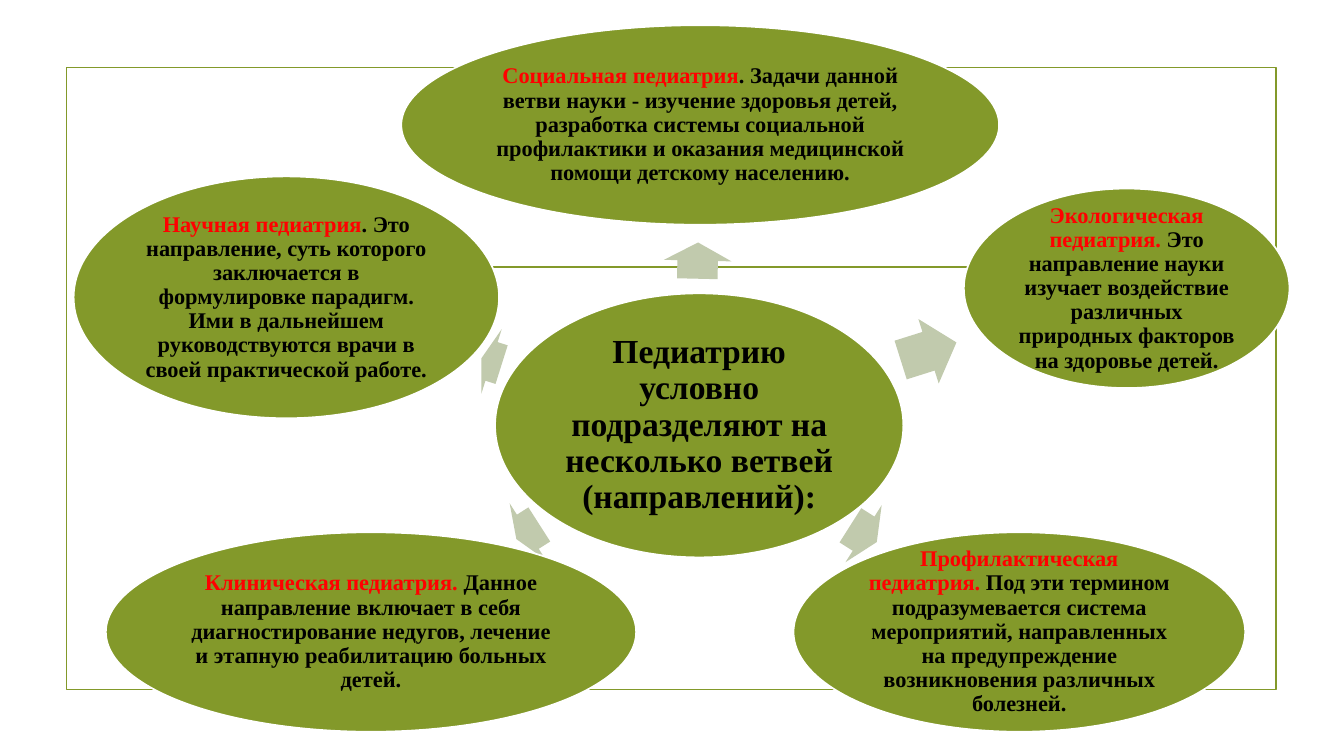
from pptx import Presentation
from pptx.dml.color import RGBColor
from pptx.enum.shapes import MSO_CONNECTOR, MSO_SHAPE
from pptx.enum.text import MSO_ANCHOR, PP_ALIGN
from pptx.oxml import parse_xml
from pptx.oxml.ns import nsdecls
from pptx.util import Pt

PX = 9144  # 100 px to the inch
OLIVE = RGBColor(0x83, 0x99, 0x2A)
SAGE = RGBColor(0xC1, 0xCA, 0xAD)
WHITE = RGBColor(0xFF, 0xFF, 0xFF)
BLACK = RGBColor(0, 0, 0)
RED = RGBColor(0xFF, 0, 0)

# Arrow box, arrow rotation, ellipse box, heading, description
BRANCHES = [
    ((674, 225, 36, 67), 271.3, (398, 25, 593, 198),
     "Социальная педиатрия",
     ". Задачи данной ветви науки - изучение здоровья детей, разработка системы "
     "социальной профилактики и оказания медицинской помощи детскому населению."),
    ((892, 315, 58, 67), 342.5, (956, 187, 323, 198),
     "Экологическая педиатрия. ",
     "Это направление науки изучает воздействие различных природных факторов "
     "на здоровье детей."),
    ((841, 496, 31, 67), 32.4, (787, 528, 448, 198),
     "Профилактическая педиатрия. ",
     "Под эти термином подразумевается система мероприятий, направленных "
     "на предупреждение возникновения различных болезней."),
    ((510, 494, 27, 67), 147.4, (105, 528, 526, 198),
     "Клиническая педиатрия. ",
     "Данное направление включает в себя диагностирование недугов, лечение "
     "и этапную реабилитацию больных детей."),
    ((477, 325, 21, 67), 197.5, (73, 175, 422, 240),
     "Научная педиатрия",
     ". Это направление, суть которого заключается в формулировке парадигм. "
     "Ими в дальнейшем руководствуются врачи в своей практической работе."),
]

prs = Presentation()
prs.slide_width, prs.slide_height = 1333 * PX, 750 * PX
slide = prs.slides.add_slide(prs.slide_layouts[6])


def add_plain_shape(preset, box, fill=None, line=None):
    shape = slide.shapes.add_shape(preset, *(length * PX for length in box))
    shape.shadow.inherit = False
    if fill is None:
        shape.fill.background()
    else:
        shape.fill.solid()
        shape.fill.fore_color.rgb = fill
    if line is None:
        shape.line.fill.background()
    else:
        shape.line.color.rgb = line
        shape.line.width = Pt(1.25)
    return shape


def add_ellipse(box, inset, size, runs):
    ellipse = add_plain_shape(MSO_SHAPE.OVAL, box, OLIVE, WHITE)
    frame = ellipse.text_frame
    frame.word_wrap = True
    frame.vertical_anchor = MSO_ANCHOR.MIDDLE
    frame.margin_left = frame.margin_right = inset * PX
    frame.margin_top = frame.margin_bottom = inset * PX
    paragraph = frame.paragraphs[0]
    paragraph.alignment = PP_ALIGN.CENTER
    paragraph.line_spacing = 0.9
    paragraph.font.name = "Times New Roman"
    paragraph.font.size = Pt(size)
    paragraph.font.bold = True
    for text, color in runs:
        run = paragraph.add_run()
        run.text = text
        run.font.color.rgb = color


add_plain_shape(MSO_SHAPE.RECTANGLE, (66, 67, 1200, 617), line=OLIVE)
divider = slide.shapes.add_connector(
    MSO_CONNECTOR.STRAIGHT, 153 * PX, 265 * PX, 1181 * PX, 265 * PX)
divider.line.color.rgb = OLIVE
divider.line.width = Pt(1.25)
divider._element.spPr.append(parse_xml(f"<a:effectLst {nsdecls('a')}/>"))

add_ellipse((491, 291, 405, 262), 3, 24, [
    ("Педиатрию условно подразделяют на несколько ветвей (направлений):", BLACK)])

for arrow_box, rotation, ellipse_box, heading, description in BRANCHES:
    arrow = add_plain_shape(MSO_SHAPE.RIGHT_ARROW, arrow_box, SAGE)
    arrow.adjustments[0] = 0.6
    arrow.rotation = rotation
    add_ellipse(ellipse_box, 2, 16, [(heading, RED), (description, BLACK)])

prs.save("out.pptx")
